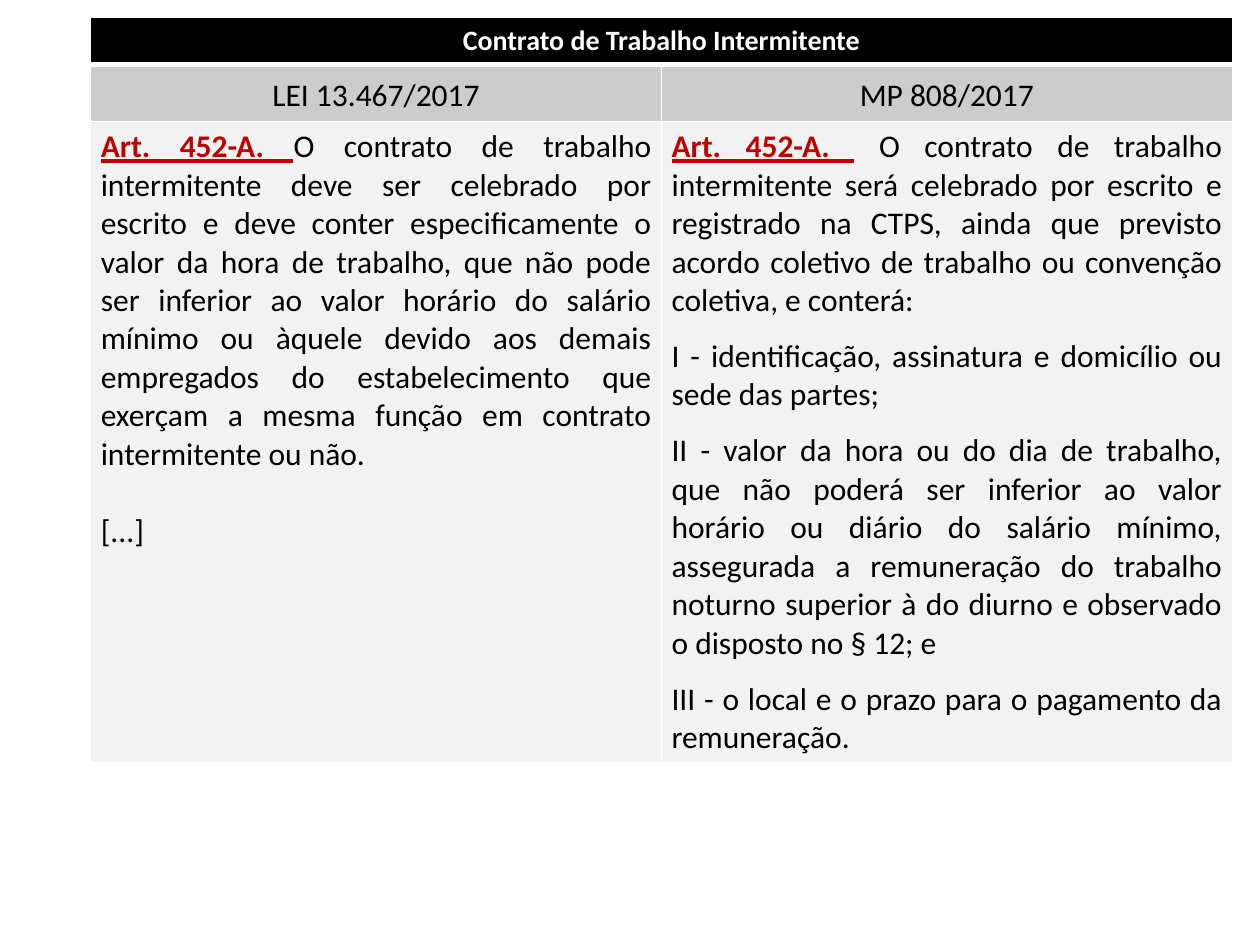
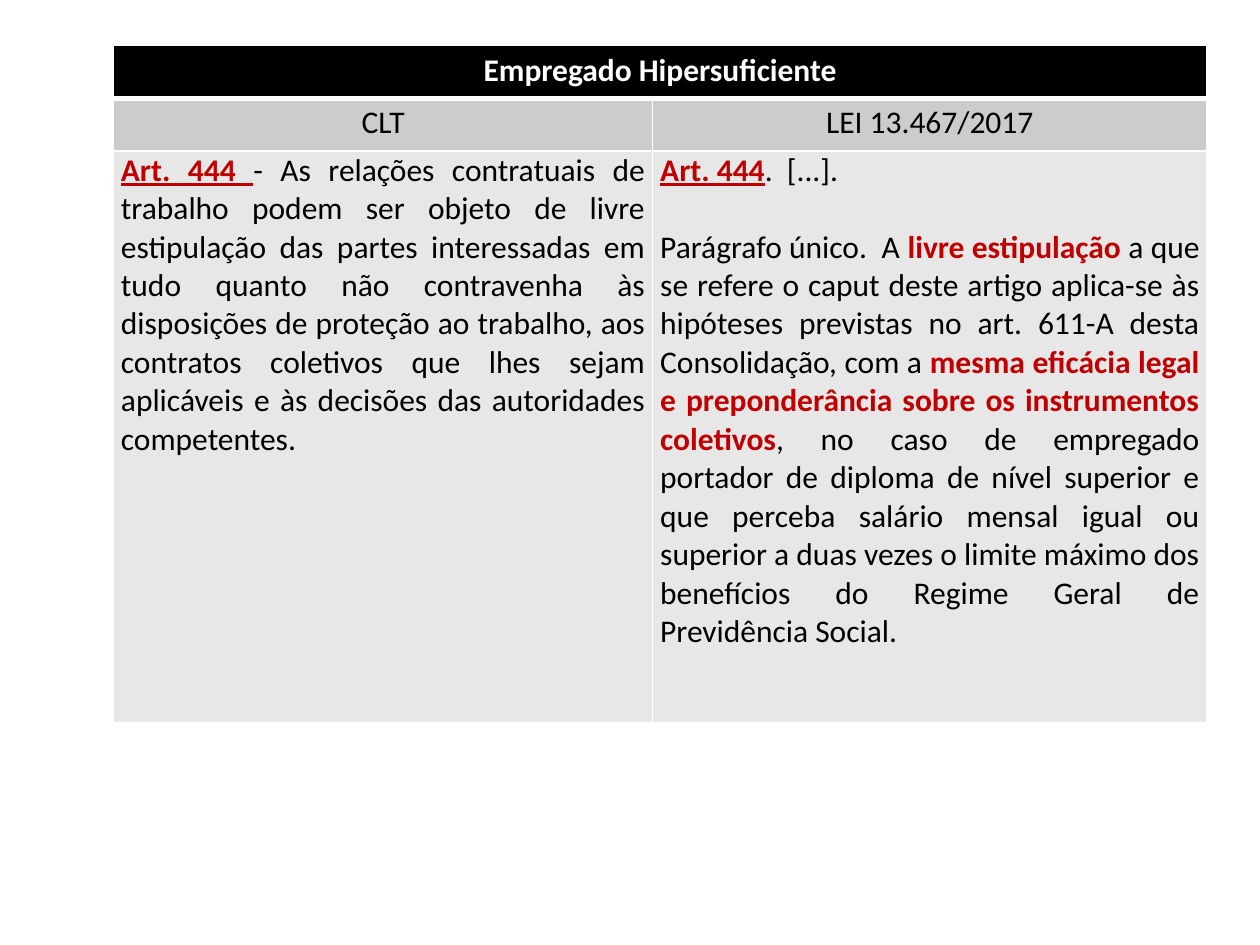
from lxml.etree import SubElement
from pptx import Presentation
from pptx.dml.color import RGBColor as RGB
from pptx.enum.text import PP_ALIGN as AL
from pptx.oxml.ns import qn
from pptx.util import Inches, Pt

COLORS = {"head": "000000", "law": "CCCCCC", "line": "FFFFFF",
          "head_text": "FFFFFF", "text": "000000", "accent": "C00000"}
FONT = "Calibri"
BODY_SIZE = 18

# Content: a paragraph is (space before, runs); a run is (text, style),
# where style "b" is a bold accent and "bu" is also underlined
SLIDES = [
    dict(
        title="Contrato de Trabalho Intermitente", title_size=16, title_spacing=1,
        at=(0.72, 0.14), cols=(4.53, 4.53), rows=(0.36, 0.45, 5.08),
        inset=(0.08, 0.05), body_fill="F2F2F2",
        laws=("LEI 13.467/2017", "MP 808/2017"),
        texts=(
            [(0, [("Art. 452-A. ", "bu"),
                  ("O contrato de trabalho intermitente deve ser celebrado por escrito e "
                   "deve conter especificamente o valor da hora de trabalho, que não pode "
                   "ser inferior ao valor horário do salário mínimo ou àquele devido aos "
                   "demais empregados do estabelecimento que exerçam a mesma função em "
                   "contrato intermitente ou não.", "")]),
             (22, [("[...]", "")])],
            [(0, [("Art. 452-A. ", "bu"),
                  (" O contrato de trabalho intermitente será celebrado por escrito e "
                   "registrado na CTPS, ainda que previsto acordo coletivo de trabalho ou "
                   "convenção coletiva, e conterá:", "")]),
             (10, [("I - identificação, assinatura e domicílio ou sede das partes;", "")]),
             (10, [("II - valor da hora ou do dia de trabalho, que não poderá ser inferior "
                    "ao valor horário ou diário do salário mínimo, assegurada a remuneração "
                    "do trabalho noturno superior à do diurno e observado o disposto no "
                    "§ 12; e", "")]),
             (10, [("III - o local e o prazo para o pagamento da remuneração.", "")])],
        ),
    ),
    dict(
        title="Empregado Hipersuficiente", title_size=18, title_spacing=1.15,
        at=(0.9, 0.36), cols=(4.28, 4.4), rows=(0.42, 0.42, 4.54),
        inset=(0.06, 0), body_fill="E7E7E7",
        laws=("CLT", "LEI 13.467/2017"),
        texts=(
            [(0, [("Art. 444 ", "bu"),
                  ("- As relações contratuais de trabalho podem ser objeto de livre "
                   "estipulação das partes interessadas em tudo quanto não contravenha às "
                   "disposições de proteção ao trabalho, aos contratos coletivos que lhes "
                   "sejam aplicáveis e às decisões das autoridades competentes.", "")])],
            [(0, [("Art. 444", "bu"), (".  [...].", "")]),
             (22, [("Parágrafo único.  A ", ""), ("livre estipulação ", "b"),
                   ("a que se refere o caput deste artigo aplica-se às hipóteses previstas "
                    "no art. 611-A desta Consolidação, com a ", ""),
                   ("mesma eficácia legal e preponderância sobre os instrumentos coletivos",
                    "b"),
                   (", no caso de empregado portador de diploma de nível superior e que "
                    "perceba salário mensal igual ou superior a duas vezes o limite máximo "
                    "dos benefícios do Regime Geral de Previdência Social.", "")])],
        ),
    ),
]


def rgb(name):
    return RGB.from_string(COLORS[name])


def style_cell(cell, fill, inset, top, bottom):
    """Set the margins, borders (widths in points) and fill of a cell."""
    cell.margin_left = cell.margin_right = Inches(inset[0])
    cell.margin_top = cell.margin_bottom = Inches(inset[1])
    tcPr = cell._tc.get_or_add_tcPr()
    for side, width in (("L", 1), ("R", 1), ("T", top), ("B", bottom)):
        ln = SubElement(tcPr, qn(f"a:ln{side}"), w=str(Pt(width)))
        SubElement(SubElement(ln, qn("a:solidFill")), qn("a:srgbClr"), val=COLORS["line"])
    cell.fill.solid()
    cell.fill.fore_color.rgb = RGB.from_string(fill)


def style_paragraph(p, align, size=BODY_SIZE, spacing=1.0, before=0):
    p.alignment, p.line_spacing, p.space_before = align, spacing, Pt(before)
    p.font.name, p.font.size = FONT, Pt(size)


def add_run(p, text, bold=False, underline=False, color="text"):
    r = p.add_run()
    r.text = text
    r.font.bold, r.font.underline = bold, underline
    r.font.color.rgb = rgb(color)


def fill_heading(cell, text, size=BODY_SIZE, spacing=1.15, bold=False, color="text"):
    p = cell.text_frame.paragraphs[0]
    style_paragraph(p, AL.CENTER, size, spacing)
    add_run(p, text, bold, color=color)


def fill_article(cell, paragraphs):
    tf = cell.text_frame
    for i, (before, runs) in enumerate(paragraphs):
        p = tf.add_paragraph() if i else tf.paragraphs[0]
        style_paragraph(p, AL.JUSTIFY, before=before)
        for text, style in runs:
            add_run(p, text, "b" in style, "u" in style, "accent" if style else "text")


def add_comparison(prs, data):
    s = prs.slides.add_slide(prs.slide_layouts[6])
    cols, rows = data["cols"], data["rows"]
    box = [Inches(v) for v in (*data["at"], sum(cols), sum(rows))]
    table = s.shapes.add_table(len(rows), len(cols), *box).table
    for col, width in zip(table.columns, cols):
        col.width = Inches(width)
    for row, height in zip(table.rows, rows):
        row.height = Inches(height)

    # Bands: title, names of the laws, articles
    bands = ((COLORS["head"], 1, 3), (COLORS["law"], 3, 1), (data["body_fill"], 1, 1))
    for row, (fill, top, bottom) in zip(table.rows, bands):
        for cell in row.cells:
            style_cell(cell, fill, data["inset"], top, bottom)

    # Text
    title = table.cell(0, 0)
    title.merge(table.cell(0, len(cols) - 1))
    fill_heading(title, data["title"], data["title_size"], data["title_spacing"],
                 True, "head_text")
    for c, (law, article) in enumerate(zip(data["laws"], data["texts"])):
        fill_heading(table.cell(1, c), law)
        fill_article(table.cell(2, c), article)


def main():
    prs = Presentation()
    prs.slide_width, prs.slide_height = Inches(10), Inches(7.5)
    for data in SLIDES:
        add_comparison(prs, data)
    prs.save("out.pptx")


if __name__ == "__main__":
    main()
